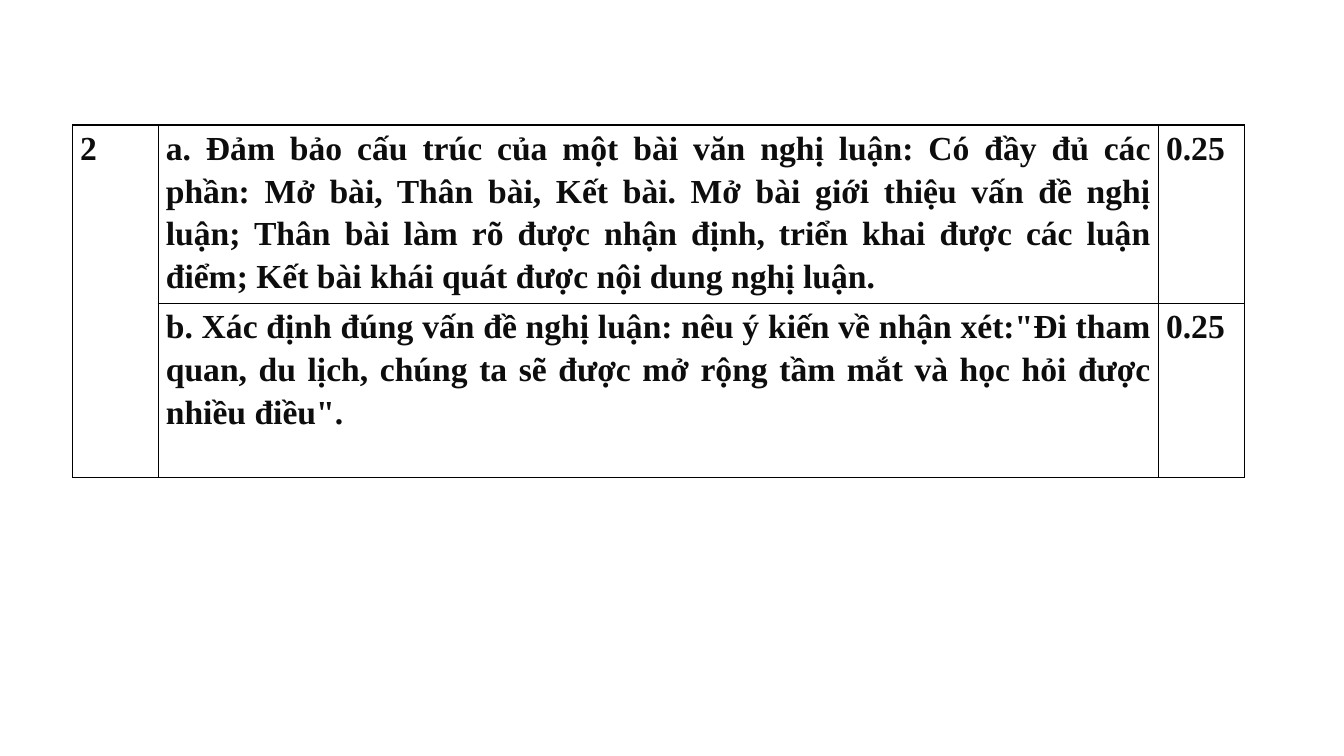
from lxml.etree import SubElement
from pptx import Presentation
from pptx.dml.color import RGBColor
from pptx.enum.text import PP_ALIGN
from pptx.oxml.ns import qn
from pptx.util import Inches, Pt

INK, BORDER, PAPER = "0D0D0D", "000000", "FFFFFF"
COLUMN_WIDTHS = [0.85, 9.92, 0.85]
ROW_HEIGHTS = [1.77, 1.73]
CRITERIA = [
    ["2",
     "a. Đảm bảo cấu trúc của một bài văn nghị luận: Có đầy đủ các phần: "
     "Mở bài, Thân bài, Kết bài. Mở bài giới thiệu vấn đề nghị luận; "
     "Thân bài làm rõ được nhận định, triển khai được các luận điểm; "
     "Kết bài khái quát được nội dung nghị luận. ",
     "0.25"],
    ["",
     "b. Xác định đúng vấn đề nghị luận: nêu ý kiến về nhận xét:"
     "\"Đi tham quan, du lịch, chúng ta sẽ được mở rộng tầm mắt "
     "và học hỏi được nhiều điều\".",
     "0.25"],
]


def set_borders(cell, color, width):
    """Line all four sides; call before filling, as borders precede the fill."""
    tc_pr = cell._tc.get_or_add_tcPr()
    for side in ("a:lnL", "a:lnR", "a:lnT", "a:lnB"):
        line = SubElement(tc_pr, qn(side), w=str(width))
        SubElement(SubElement(line, qn("a:solidFill")), qn("a:srgbClr"), val=color)


prs = Presentation()
prs.slide_width, prs.slide_height = Inches(13.33), Inches(7.5)
slide = prs.slides.add_slide(prs.slide_layouts[6])

table = slide.shapes.add_table(
    len(ROW_HEIGHTS), len(COLUMN_WIDTHS), Inches(0.72), Inches(1.24),
    Inches(sum(COLUMN_WIDTHS)), Inches(sum(ROW_HEIGHTS))).table
table.first_row = table.horz_banding = False
for column, width in zip(table.columns, COLUMN_WIDTHS):
    column.width = Inches(width)
for row, height in zip(table.rows, ROW_HEIGHTS):
    row.height = Inches(height)
table.cell(0, 0).merge(table.cell(1, 0))

for row, texts in zip(table.rows, CRITERIA):
    for cell, text in zip(row.cells, texts):
        cell.margin_left = cell.margin_right = Pt(5.4)
        cell.margin_top = cell.margin_bottom = 0
        set_borders(cell, BORDER, Pt(1))
        cell.fill.solid()
        cell.fill.fore_color.rgb = RGBColor.from_string(PAPER)
        p = cell.text_frame.paragraphs[0]
        p.text = text
        p.alignment = PP_ALIGN.JUSTIFY
        p.line_spacing = 1.15
        p.space_after = Pt(10)
        for r in p.runs:
            r.font.name = "Times New Roman"
            r.font.size = Pt(24)
            r.font.bold = True
            r.font.color.rgb = RGBColor.from_string(INK)

prs.save("out.pptx")
